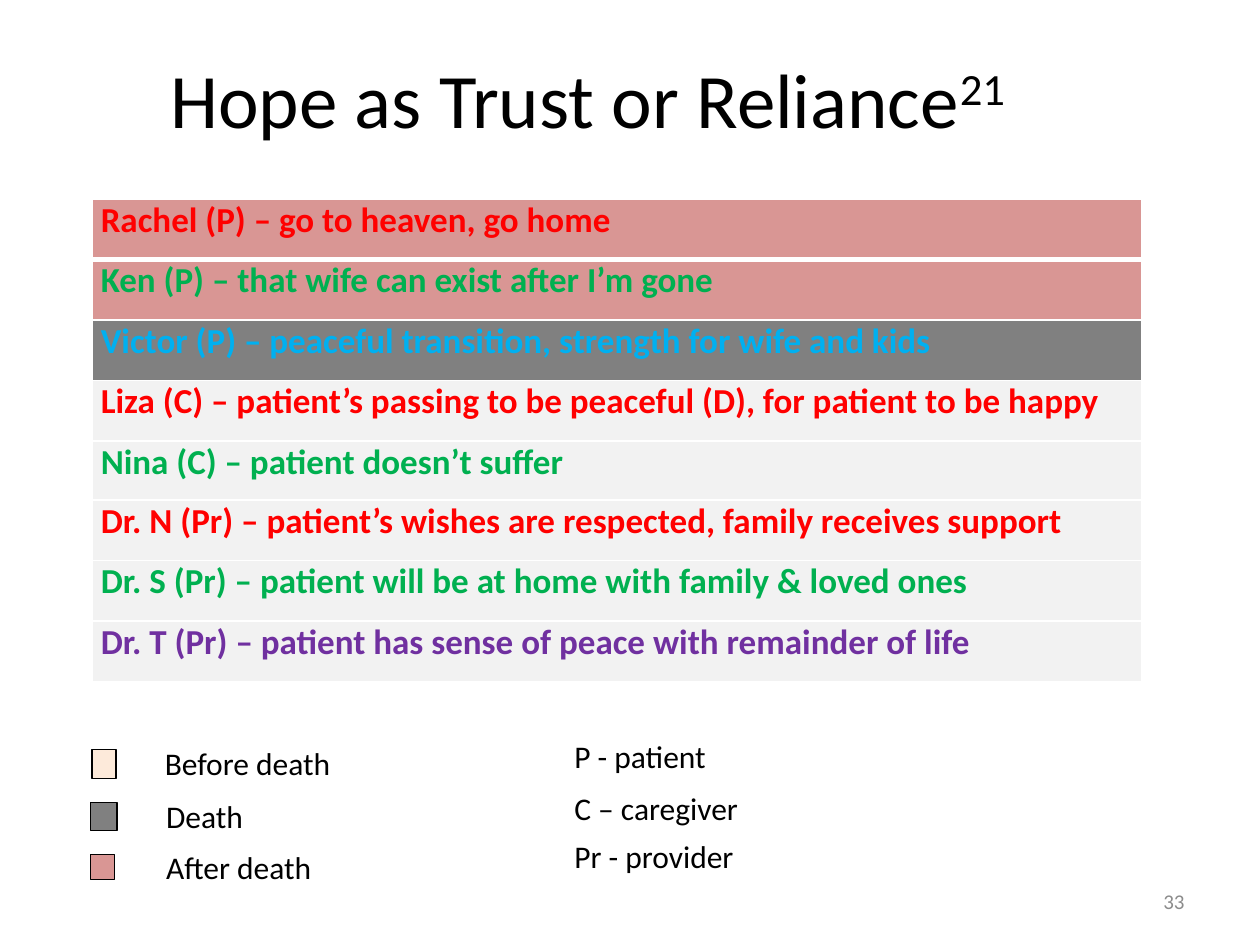
from dataclasses import dataclass
from typing import NamedTuple

from lxml.etree import SubElement
from pptx import Presentation
from pptx.dml.color import RGBColor
from pptx.enum.shapes import MSO_SHAPE as Shape
from pptx.enum.text import MSO_ANCHOR as Anchor, PP_ALIGN as Align
from pptx.oxml.ns import qn
from pptx.util import Pt

EMU_PER_PX = 9144  # 100 px to the inch


@dataclass(frozen=True)
class Theme:
    font: str = "Calibri"
    black: str = "000000"
    white: str = "FFFFFF"
    red: str = "FF0000"
    green: str = "00B050"
    blue: str = "00B0F0"
    purple: str = "7030A0"
    number: str = "8C8C8C"
    before: str = "FDEADA"
    death: str = "808080"
    after: str = "D99694"
    neutral: str = "F2F2F2"
    title_size: int = 44
    table_size: int = 20
    legend_size: int = 18
    number_size: int = 12


THEME = Theme()


class Box(NamedTuple):
    left: int
    top: int
    width: int
    height: int


class HopeRow(NamedTuple):
    text: str
    color: str
    fill: str
    height: int = 48


class LegendItem(NamedTuple):
    text: str
    label: Box
    swatch: Box | None = None
    fill: str = ""


HOPES = [
    HopeRow("Rachel (P) – go to heaven, go home", THEME.red, THEME.after),
    HopeRow("Ken (P) – that wife can exist after I’m gone", THEME.green, THEME.after),
    HopeRow("Victor (P) – peaceful transition, strength for wife and kids",
            THEME.blue, THEME.death),
    HopeRow("Liza (C) – patient’s passing to be peaceful (D), for patient to be happy",
            THEME.red, THEME.neutral),
    HopeRow("Nina (C) – patient doesn’t suffer", THEME.green, THEME.neutral, 47),
    HopeRow("Dr. N (Pr) – patient’s wishes are respected, family receives support",
            THEME.red, THEME.neutral),
    HopeRow("Dr. S (Pr) – patient will be at home with family & loved ones",
            THEME.green, THEME.neutral),
    HopeRow("Dr. T (Pr) – patient has sense of peace with remainder of life",
            THEME.purple, THEME.neutral),
]

LEGEND = [
    LegendItem("Before death", Box(121, 586, 166, 40), Box(73, 595, 19, 23), THEME.before),
    LegendItem("Death", Box(122, 628, 166, 40), Box(72, 637, 21, 22), THEME.death),
    LegendItem("After death", Box(122, 668, 166, 40), Box(72, 678, 19, 20), THEME.after),
    LegendItem("P - patient", Box(446, 580, 208, 40)),
    LegendItem("C – caregiver", Box(446, 621, 208, 40)),
    LegendItem("Pr - provider", Box(446, 659, 208, 40)),
]


def px(length: int) -> int:
    return length * EMU_PER_PX


def place(box: Box) -> list[int]:
    return [px(length) for length in box]


def write(frame, text: str, *, size: int, color: str = THEME.black, bold: bool = False,
          align=Align.LEFT, anchor=None, superscript: str = "") -> None:
    """Fill a text frame with one formatted paragraph."""
    frame.word_wrap = True
    if anchor is not None:
        frame.vertical_anchor = anchor
    paragraph = frame.paragraphs[0]
    paragraph.alignment = align
    for part in filter(None, (text, superscript)):
        run = paragraph.add_run()
        run.text = part
        run.font.name = THEME.font
        run.font.size = Pt(size)
        run.font.bold = bold
        run.font.color.rgb = RGBColor.from_string(color)
    if superscript:
        run.font._element.set("baseline", "30000")


def add_text(slide, box: Box, text: str, **text_format) -> None:
    write(slide.shapes.add_textbox(*place(box)).text_frame, text, **text_format)


def set_borders(cell, top: int, bottom: int) -> None:
    """Draw white cell borders; widths are in points."""
    properties = cell._tc.get_or_add_tcPr()
    for side, width in (("L", 1), ("R", 1), ("T", top), ("B", bottom)):
        line = SubElement(properties, qn(f"a:ln{side}"), w=str(Pt(width)))
        fill = SubElement(line, qn("a:solidFill"))
        SubElement(fill, qn("a:srgbClr"), val=THEME.white)


def add_hope_table(slide, left: int, top: int, width: int, rows: list[HopeRow]) -> None:
    box = Box(left, top, width, sum(row.height for row in rows))
    table = slide.shapes.add_table(len(rows), 1, *place(box)).table
    table.first_row = table.horz_banding = False
    for index, row in enumerate(rows):
        table.rows[index].height = px(row.height)
        cell = table.cell(index, 0)
        cell.margin_left = cell.margin_right = px(7)
        cell.margin_top = cell.margin_bottom = 0
        # A thick rule sits under the first row
        set_borders(cell, top=3 if index == 1 else 1, bottom=3 if index == 0 else 1)
        cell.fill.solid()
        cell.fill.fore_color.rgb = RGBColor.from_string(row.fill)
        write(cell.text_frame, row.text, size=THEME.table_size, color=row.color, bold=True)


def add_swatch(slide, box: Box, fill: str) -> None:
    shape = slide.shapes.add_shape(Shape.RECTANGLE, *place(box))
    shape.shadow.inherit = False
    shape.fill.solid()
    shape.fill.fore_color.rgb = RGBColor.from_string(fill)
    shape.line.color.rgb = RGBColor.from_string(THEME.black)
    shape.line.width = Pt(0.75)


def main() -> None:
    presentation = Presentation()
    presentation.slide_width, presentation.slide_height = px(1000), px(750)
    slide = presentation.slides.add_slide(presentation.slide_layouts[6])

    # Title
    add_text(slide, Box(50, 30, 833, 95), "Hope as Trust or Reliance", superscript="21",
             size=THEME.title_size, align=Align.CENTER, anchor=Anchor.MIDDLE)

    # Hopes by person
    add_hope_table(slide, 73, 158, 833, HOPES)

    # Slide number
    add_text(slide, Box(717, 695, 233, 40), "33", size=THEME.number_size,
             color=THEME.number, align=Align.RIGHT, anchor=Anchor.MIDDLE)

    # Legend
    for item in LEGEND:
        if item.swatch:
            add_swatch(slide, item.swatch, item.fill)
        add_text(slide, item.label, item.text, size=THEME.legend_size)

    presentation.save("out.pptx")


if __name__ == "__main__":
    main()
